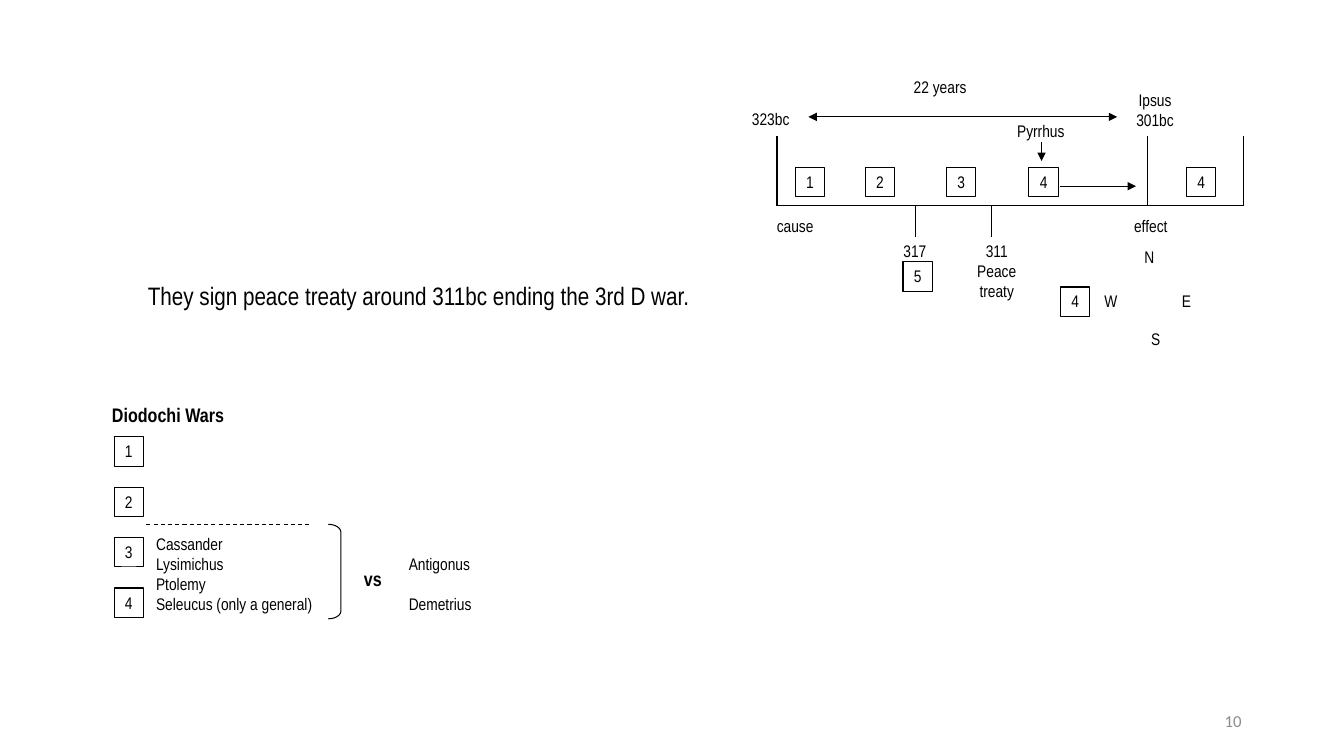
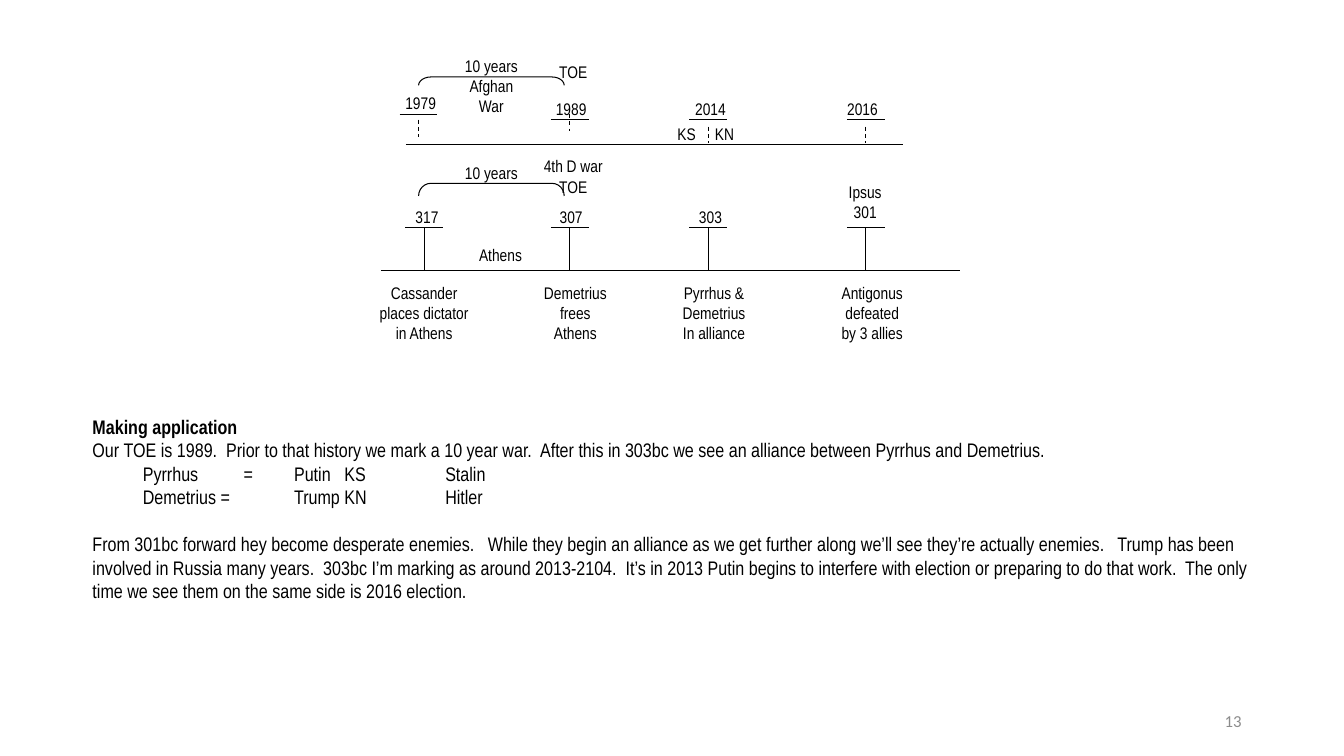
from pptx import Presentation
from pptx.dml.color import RGBColor
from pptx.enum.dml import MSO_LINE
from pptx.enum.shapes import MSO_CONNECTOR, MSO_SHAPE
from pptx.enum.text import MSO_ANCHOR, PP_ALIGN
from pptx.oxml.ns import qn
from pptx.util import Pt
from lxml import etree

BLACK = RGBColor(0x00, 0x00, 0x00)
GREY = RGBColor(0x8C, 0x8C, 0x8C)
FONT = "Arial Narrow"
LEFT, CENTER = PP_ALIGN.LEFT, PP_ALIGN.CENTER
BOX = 21  # side of a numbered square


def add_item(s, x, y, w, h, text="", kind=None, align=CENTER, size=12,
             bold=False, inset=3):
    """Add a text box, or an outlined shape when a kind is given."""
    frame = Pt(x), Pt(y), Pt(w), Pt(h)
    if kind is None:
        sp = s.shapes.add_textbox(*frame)
    else:
        sp = s.shapes.add_shape(kind, *frame)
        sp.shadow.inherit = False
        sp.fill.background()
        sp.line.color.rgb = BLACK
        sp.line.width = Pt(0.75)
    tf = sp.text_frame
    tf.word_wrap = True
    tf.vertical_anchor = MSO_ANCHOR.TOP
    tf.margin_left = tf.margin_right = Pt(inset)
    tf.margin_top = tf.margin_bottom = Pt(min(inset, 3.6))
    tf.text = text
    for p in tf.paragraphs:
        p.alignment = align
        for r in p.runs:
            r.font.name = FONT
            r.font.size = Pt(size)
            r.font.bold = bold
            r.font.color.rgb = BLACK
    return sp


def add_line(s, x1, y1, x2, y2, ends=(), dashed=False):
    """Add a thin line; ends lists the arrowheads, headEnd before tailEnd."""
    c = s.shapes.add_connector(MSO_CONNECTOR.STRAIGHT, Pt(x1), Pt(y1), Pt(x2), Pt(y2))
    c.line.color.rgb = BLACK
    c.line.width = Pt(0.75)
    if dashed:
        c.line.dash_style = MSO_LINE.DASH
    spPr = c._element.spPr
    for end in ends:
        etree.SubElement(spPr.find(qn("a:ln")), qn("a:" + end), type="triangle")
    etree.SubElement(spPr, qn("a:effectLst"))


prs = Presentation()
prs.slide_width, prs.slide_height = Pt(960), Pt(540)

# Slides with their page numbers
slides = []
for number in ("10", "13"):
    s = prs.slides.add_slide(prs.slide_layouts[6])
    sp = add_item(s, 678, 500.5, 216, 28.8, number, align=PP_ALIGN.RIGHT, inset=7.2)
    sp.text_frame.vertical_anchor = MSO_ANCHOR.MIDDLE
    font = sp.text_frame.paragraphs[0].runs[0].font
    font.name = "Calibri"
    font.color.rgb = GREY
    slides.append(s)
wars, application = slides

# Wars: timeline frame, ticks and arrows
s = wars
axis_y = 147
add_line(s, 555, axis_y, 888, axis_y)
for x in (555, 820, 888):
    add_line(s, x, 97, x, axis_y)
for x in (654, 708):
    add_line(s, x, axis_y, x, 169)
add_line(s, 577.5, 83.5, 798, 83.5, ends=("headEnd", "tailEnd"))
add_line(s, 757.5, 133, 811.5, 133, ends=("tailEnd",))
add_line(s, 744, 101.5, 744, 115, ends=("tailEnd",))

# Wars: timeline labels and compass
for text, x, y, w, h in (
    ("323bc", 528, 75, 45, 22),
    ("Ipsus\n301bc", 798, 61, 54, 36),
    ("22 years", 640, 52, 63, 28),
    ("Pyrrhus", 717, 83.5, 53, 18),
    ("cause", 541.5, 151, 53, 18),
    ("effect", 802, 151, 40, 18),
    ("317", 627, 169, 53, 18),
    ("311\nPeace\ntreaty", 685.5, 169, 53, 58),
    ("N", 811.5, 173.5, 19, 19),
    ("W", 784, 205, 19, 19),
    ("E", 838, 205, 19, 19),
    ("S", 816, 232, 19, 19),
):
    add_item(s, x, y, w, h, text)

# Wars: numbered squares on the timeline and down the list
squares = [("1", 568, 119.5), ("2", 618, 119.5), ("3", 676, 119.5),
           ("4", 735, 119.5), ("4", 847.5, 119.5), ("5", 645, 187),
           ("4", 757.5, 205)]
squares += [(str(i + 1), 81.5, 312 + 36 * i) for i in range(4)]
for text, x, y in squares:
    add_item(s, x, y, BOX, BOX, text, MSO_SHAPE.RECTANGLE)

# Wars: statement and opposing sides
add_item(s, 98.5, 197, 480, 44, "They sign peace treaty around 311bc ending the 3rd D war.",
         align=LEFT, size=18, inset=7.2)
add_item(s, 77, 284.5, 148, 22, "Diodochi Wars", align=LEFT, size=14, bold=True)
add_item(s, 108.5, 378, 122, 63,
         "Cassander\nLysimichus\nPtolemy\nSeleucus (only a general)", align=LEFT)
add_line(s, 104.5, 374.5, 221, 374.5, dashed=True)
sp = add_item(s, 234.5, 374.5, 9, 67.5, kind=MSO_SHAPE.LEFT_BRACKET)
sp.adjustments[0] = 0.62
sp.rotation = 180
add_item(s, 257, 402, 28, 22, "vs", align=LEFT, size=14, bold=True)
sp = add_item(s, 289, 392.5, 140, 50, "Antigonus\nDemetrius", align=LEFT)
sp.text_frame.paragraphs[1].space_before = Pt(14.3)

# Application: the two time axes
s = application
modern_y, ancient_y = 103.5, 193.5
add_line(s, 290, modern_y, 645, modern_y)
add_line(s, 272, ancient_y, 686, ancient_y)

# Application: event stems with their caps
cap = 13.5
for x, cap_y, stem_top, stem_bottom, dashed in (
    (299, 81.5, 85.5, 98, True),
    (407, 85.5, 81.5, 93.5, True),
    (506, 85.5, 90.5, 102.5, True),
    (618.5, 85.5, 90.5, 102.5, True),
    (303, 162.5, 162.5, ancient_y, False),
    (407, 162.5, 162.5, ancient_y, False),
    (506, 162.5, 162.5, ancient_y, False),
    (618.5, 162.5, 162.5, ancient_y, False),
):
    add_line(s, x - cap, cap_y, x + cap, cap_y)
    add_line(s, x, stem_top, x, stem_bottom, dashed=dashed)

# Application: ten-year brackets
for x, y, w, bend in ((348, 6, 6, 1.47), (346.5, 83.5, 9, 0.96)):
    sp = add_item(s, x, y, w, 104, kind=MSO_SHAPE.LEFT_BRACKET)
    sp.adjustments[0] = bend
    sp.rotation = 90

# Application: labels
for text, x, y, w, h in (
    ("1979", 285.5, 63.5, 30, 14),
    ("1989", 393, 67.5, 30, 14),
    ("2014", 492.5, 67.5, 30, 14),
    ("2016", 596, 67.5, 40, 14),
    ("10 years\nAfghan War", 326, 36.5, 50, 50),
    ("TOE", 384.5, 41, 50, 18),
    ("KS", 479, 85.5, 23, 19),
    ("KN", 506, 85.5, 23, 19),
    ("317", 290, 145, 30, 20),
    ("307", 393, 145, 30, 20),
    ("303", 492.5, 145, 30, 20),
    ("Ipsus\n301", 591, 126.5, 54, 38),
    ("10 years", 326, 113, 50, 20),
    ("4th D war\nTOE", 384.5, 108.5, 50, 36),
    ("Athens", 326, 171.5, 63, 20),
    ("Cassander places dictator in Athens", 267, 199, 72, 50),
    ("Demetrius frees\nAthens", 375, 199, 72, 50),
    ("Pyrrhus & Demetrius\nIn alliance", 483, 199, 54, 50),
    ("Antigonus defeated by 3 allies", 596, 199, 54, 50),
):
    add_item(s, x, y, w, h, text)

# Application: commentary
sp = add_item(s, 59, 292.5, 845, 158, "\n".join((
    "Making application",
    "Our TOE is 1989.  Prior to that history we mark a 10 year war.  After this in 303bc "
    "we see an alliance between Pyrrhus and Demetrius.",
    "\tPyrrhus\t=\tPutin\tKS\t\tStalin",
    "\tDemetrius =\t\tTrump\tKN\t\tHitler",
    "From 301bc forward hey become desperate enemies.   While they begin an alliance as we "
    "get further along we’ll see they’re actually enemies.   Trump has been involved in "
    "Russia many years.  303bc I’m marking as around 2013-2104.  It’s in 2013 Putin begins "
    "to interfere with election or preparing to do that work.  The only time we see them on "
    "the same side is 2016 election.",
)), align=LEFT, size=14, inset=7.2)
paragraphs = sp.text_frame.paragraphs
paragraphs[0].runs[0].font.bold = True
paragraphs[-1].space_before = Pt(16.8)

prs.save("out.pptx")
